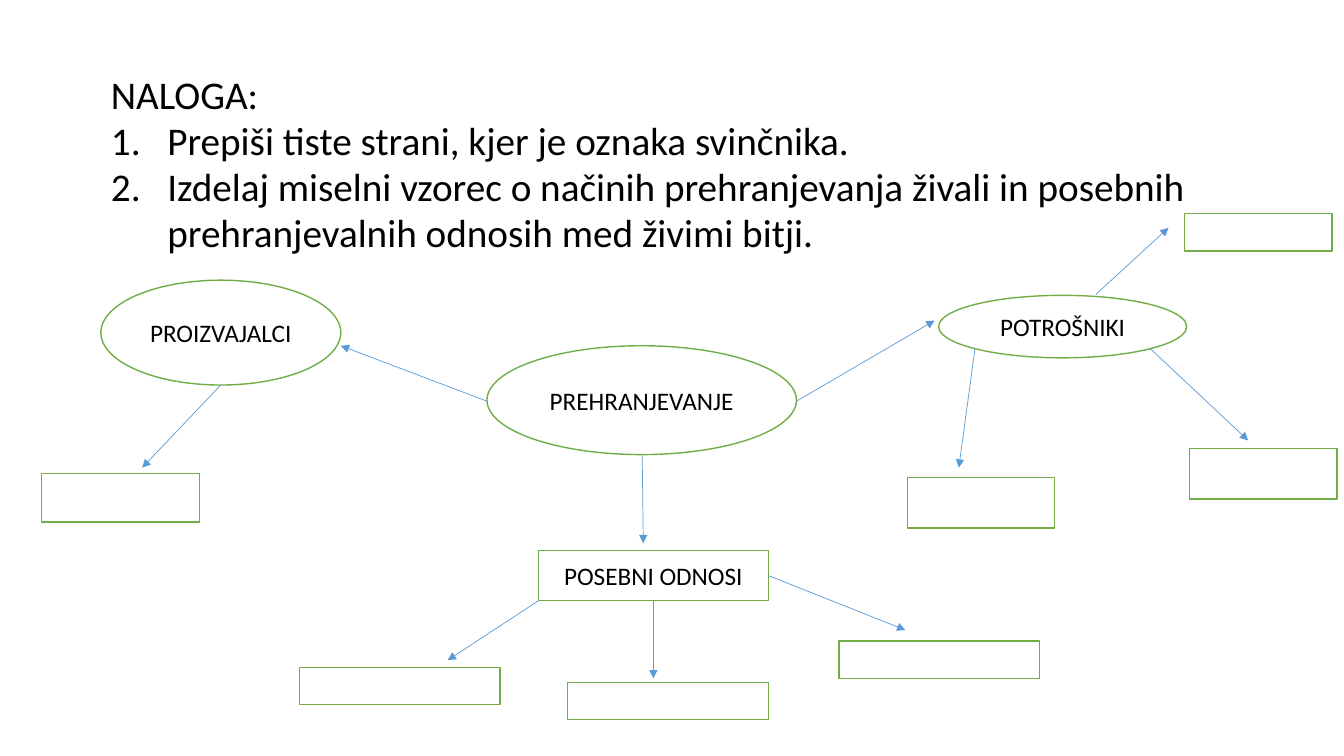
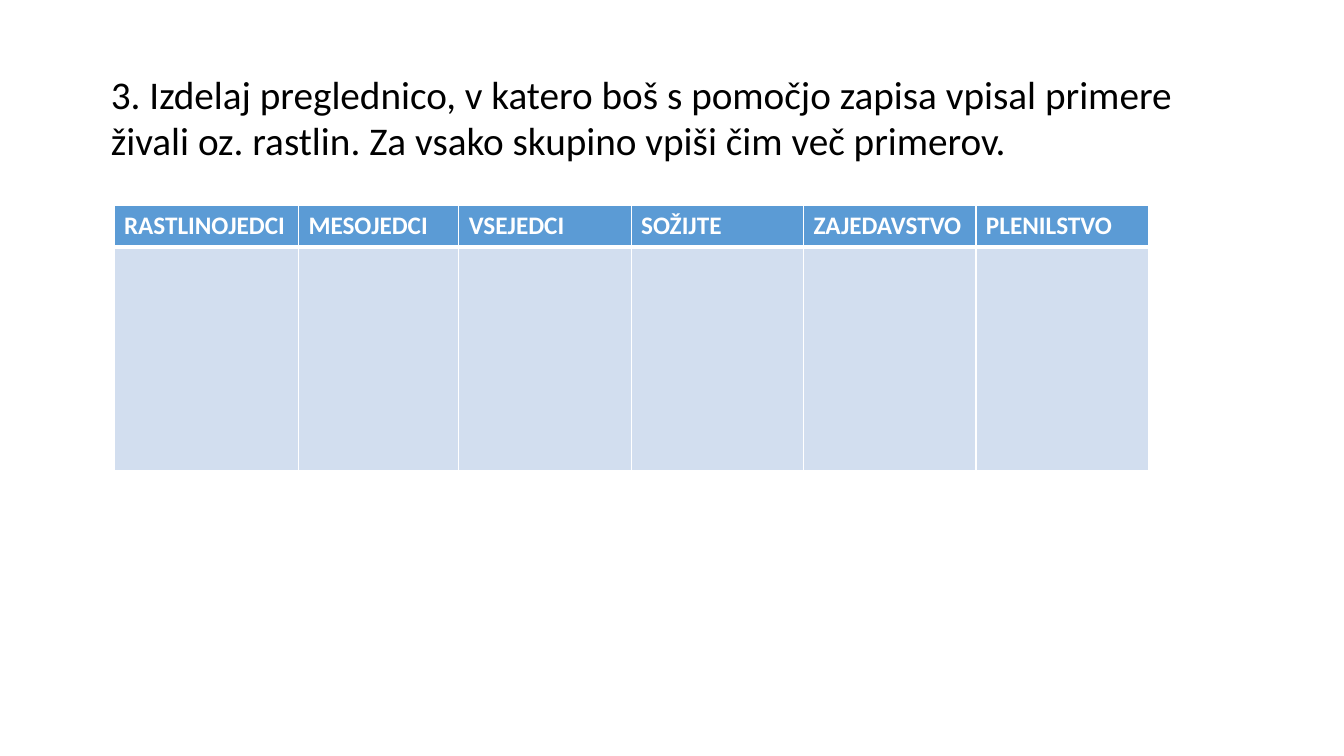
from pptx import Presentation, util as u
from pptx.dml.color import RGBColor
from pptx.enum import shapes, text
from pptx.oxml import parse_xml
from pptx.oxml.ns import nsdecls, qn
from lxml import etree

FONT, BLACK, WHITE = "Calibri", "000000", "FFFFFF"
GREEN, BLUE, PALE = "70AD47", "5B9BD5", "D2DEEF"
NS = nsdecls("a")
color = RGBColor.from_string

deck = Presentation()
deck.slide_width, deck.slide_height = u.Inches(13.33), u.Inches(7.5)


def write(par, words, size, tint=BLACK, bold=False):
    run = par.add_run()
    run.text = words
    run.font.name, run.font.size, run.font.bold = FONT, u.Pt(size), bold
    run.font.color.rgb = color(tint)


def start(lines):
    """Add a slide whose body holds (words, numbered) lines."""
    slide = deck.slides.add_slide(deck.slide_layouts[1])
    title = slide.shapes.title.element
    title.getparent().remove(title)
    body = slide.placeholders[1]
    body.left, body.top = u.Inches(1), u.Inches(0.67)
    body.width, body.height = u.Inches(11.33), u.Inches(6)
    frame = body.text_frame
    frame.auto_size = text.MSO_AUTO_SIZE.NONE
    for i, (words, numbered) in enumerate(lines):
        par = frame.add_paragraph() if i else frame.paragraphs[0]
        par.line_spacing, par.space_before = 0.98, u.Pt(0)
        props = par._p.get_or_add_pPr()
        indent = u.Inches(0.56) if numbered else 0
        props.set("marL", str(indent))
        props.set("indent", str(-indent))
        if numbered:
            font = etree.SubElement(props, qn("a:buFont"))
            font.set("typeface", FONT)
            mark = etree.SubElement(props, qn("a:buAutoNum"))
            mark.set("type", "arabicPeriod")
        else:
            etree.SubElement(props, qn("a:buNone"))
        write(par, words, 28)
    return slide


# Slide 1: task and mind map
slide = start([
    ("NALOGA:", False),
    ("Prepiši tiste strani, kjer je oznaka svinčnika.", True),
    ("Izdelaj miselni vzorec o načinih prehranjevanja živali in posebnih "
     "prehranjevalnih odnosih med živimi bitji.", True),
])

# Named nodes and empty boxes to fill in
OVAL, RECT = shapes.MSO_SHAPE.OVAL, shapes.MSO_SHAPE.RECTANGLE
nodes = [
    (OVAL, 4.83, 3.43, 3.07, 1.08, "PREHRANJEVANJE"),
    (OVAL, 9.31, 2.93, 2.46, 0.62, "POTROŠNIKI"),
    (OVAL, 1, 2.78, 2.38, 1.04, "PROIZVAJALCI"),
    (RECT, 0.41, 4.7, 1.57, 0.48, ""),
    (RECT, 11.75, 2.12, 1.46, 0.37, ""),
    (RECT, 9, 4.74, 1.46, 0.5, ""),
    (RECT, 11.8, 4.45, 1.46, 0.5, ""),
    (RECT, 2.97, 6.62, 1.99, 0.37, ""),
    (RECT, 5.63, 6.77, 1.99, 0.37, ""),
    (RECT, 8.32, 6.36, 1.99, 0.37, ""),
    (RECT, 5.34, 5.46, 2.28, 0.5, "POSEBNI ODNOSI"),
]
for kind, x, y, wide, high, words in nodes:
    node = slide.shapes.add_shape(
        kind, u.Inches(x), u.Inches(y), u.Inches(wide), u.Inches(high))
    node.shadow.inherit = False
    node.fill.solid()
    node.fill.fore_color.rgb = color(WHITE)
    node.line.color.rgb = color(GREEN)
    node.line.width = u.Pt(1)
    if words:
        node.text_frame.vertical_anchor = text.MSO_ANCHOR.MIDDLE
        par = node.text_frame.paragraphs[0]
        par.alignment = text.PP_ALIGN.CENTER
        write(par, words, 18)
special = node

# Arrows: from x, y to x, y, and the side of the special box they leave
arrows = [
    (7.9, 3.98, 9.27, 3.18, None),
    (4.83, 3.98, 3.38, 3.43, None),
    (6.37, 4.52, 6.38, 5.39, None),
    (11.41, 3.46, 12.38, 4.37, None),
    (9.67, 3.46, 9.51, 4.64, None),
    (10.87, 2.92, 11.59, 2.26, None),
    (2.19, 3.82, 1.41, 4.64, None),
    (5.34, 5.96, 4.44, 6.55, None),
    (6.48, 5.96, 6.48, 6.73, 2),
    (7.62, 5.71, 8.98, 6.25, 3),
]
for *ends, side in arrows:
    arrow = slide.shapes.add_connector(
        shapes.MSO_CONNECTOR.STRAIGHT, *[u.Inches(v) for v in ends])
    if side is not None:
        arrow.begin_connect(special, side)
    arrow.line.color.rgb = color(BLUE)
    arrow.line.width = u.Pt(0.5)
    tip = etree.SubElement(arrow.line._get_or_add_ln(), qn("a:tailEnd"))
    tip.set("type", "triangle")
    etree.SubElement(arrow._element.spPr, qn("a:effectLst"))

# Slide 2: task and table
slide = start([
    ("3. Izdelaj preglednico, v katero boš s pomočjo zapisa vpisal primere "
     "živali oz. rastlin. Za vsako skupino vpiši čim več primerov.", False),
])
heads = ["RASTLINOJEDCI", "MESOJEDCI", "VSEJEDCI",
         "SOŽIJTE", "ZAJEDAVSTVO", "PLENILSTVO"]
wides = [1.83, 1.59] + [1.71] * 4
highs = [0.41, 2.22]
grid = slide.shapes.add_table(
    len(highs), len(heads), u.Inches(1.13), u.Inches(2.04),
    u.Inches(sum(wides)), u.Inches(sum(highs))).table
for row, high in zip(grid.rows, highs):
    row.height = u.Inches(high)
for col, wide in enumerate(wides):
    grid.columns[col].width = u.Inches(wide)
    write(grid.cell(0, col).text_frame.paragraphs[0], heads[col], 18,
          WHITE, True)
    for row, tint in enumerate([BLUE, PALE]):
        cell = grid.cell(row, col)
        props = cell._tc.get_or_add_tcPr()
        # White rules, thick between header and body
        for edge in "LRTB":
            thick = (row, edge) in [(0, "B"), (1, "T")]
            props.append(parse_xml(
                f'<a:ln{edge} {NS} w="{u.Pt(3 if thick else 1)}"><a:solidFill>'
                f'<a:srgbClr val="{WHITE}"/></a:solidFill></a:ln{edge}>'))
        cell.fill.solid()
        cell.fill.fore_color.rgb = color(tint)

deck.save("out.pptx")
